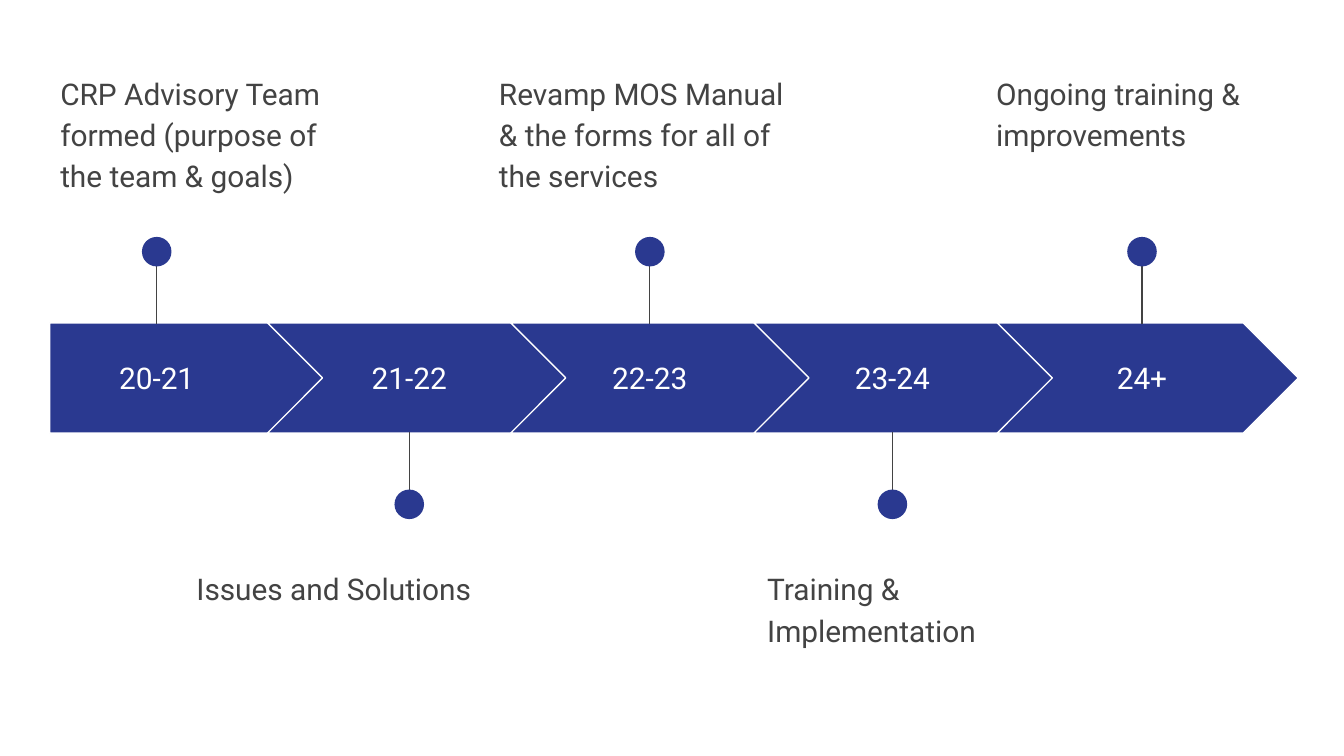
from dataclasses import dataclass

from lxml.etree import SubElement
from pptx import Presentation
from pptx.dml.color import RGBColor
from pptx.enum.shapes import MSO_CONNECTOR, MSO_SHAPE
from pptx.enum.text import MSO_ANCHOR, PP_ALIGN
from pptx.oxml.ns import qn
from pptx.slide import Slide
from pptx.util import Inches, Pt


@dataclass(frozen=True)
class Theme:
    font: str = "Roboto"
    size: Pt = Pt(16)
    line_width: Pt = Pt(0.75)
    blue: RGBColor = RGBColor(0x2A, 0x39, 0x90)
    gray: RGBColor = RGBColor(0x43, 0x43, 0x43)
    white: RGBColor = RGBColor(0xFF, 0xFF, 0xFF)


@dataclass(frozen=True)
class Milestone:
    """One school year; pin and note_left are percentages of the slide width."""
    years: str
    note: str
    pin: float
    note_left: float
    label_width: float = 1.44
    note_height: float = 0.99


THEME = Theme()
WIDTH = 10
HEIGHT = WIDTH * 9 / 16
MIDDLE = HEIGHT / 2
PERCENT = WIDTH / 100

GRID_LEFT, COLUMN = 0.18, 1.81
ARROW_WIDTH, ARROW_HEIGHT = 2.24, 0.82
FIRST_INSET = 0.19
LABEL_HEIGHT = 0.51
PIN_START, PIN_END = 0.4, 1.01
DOT, DOT_OFFSET = 0.22, 0.94
NOTE_WIDTH = 2.45
NOTE_TOP_ABOVE, NOTE_TOP_BELOW = 0.42, 4.11

MILESTONES = [
    Milestone("20-21", "CRP Advisory Team formed (purpose of the team & goals)",
              11.66, 3.5, label_width=1.59),
    Milestone("21-22", "Issues and Solutions", 30.45, 13.63),
    Milestone("22-23", "Revamp MOS Manual & the forms for all of the services",
              48.35, 36.14, note_height=1.19),
    Milestone("23-24", "Training & Implementation", 66.4, 56.1),
    Milestone("24+", "Ongoing training & improvements", 84.97, 73.13),
]
LABEL_FORMAT = {"alignment": PP_ALIGN.CENTER}
NOTE_FORMAT = {"line_spacing": 1.15, "space_after": Pt(16)}


def add_solid(page: Slide, kind: MSO_SHAPE, left: float, top: float,
              width: float, height: float, outlined: bool) -> None:
    shape = page.shapes.add_shape(
        kind, Inches(left), Inches(top), Inches(width), Inches(height))
    shape.shadow.inherit = False
    shape.fill.solid()
    shape.fill.fore_color.rgb = THEME.blue
    if outlined:
        shape.line.color.rgb = THEME.white
        shape.line.width = THEME.line_width
    else:
        shape.line.fill.background()


def add_text(page: Slide, text: str, left: float, top: float, width: float,
             height: float, color: RGBColor, anchor: MSO_ANCHOR,
             para_format: dict) -> None:
    box = page.shapes.add_textbox(
        Inches(left), Inches(top), Inches(width), Inches(height))
    frame = box.text_frame
    frame.word_wrap = True
    frame.vertical_anchor = anchor
    for side in ("left", "top", "right", "bottom"):
        setattr(frame, f"margin_{side}", Inches(0.1))
    para = frame.paragraphs[0]
    for name, value in para_format.items():
        setattr(para, name, value)
    span = para.add_run()
    span.text = text
    for name, value in {"name": THEME.font, "size": THEME.size}.items():
        setattr(span.font, name, value)
    span.font.color.rgb = color


def add_pin(page: Slide, center: float, direction: int) -> None:
    """Draw a stem and dot leaving the arrow band: -1 is up, 1 is down."""
    stem = page.shapes.add_connector(
        MSO_CONNECTOR.STRAIGHT,
        Inches(center), Inches(MIDDLE + direction * PIN_END),
        Inches(center), Inches(MIDDLE + direction * PIN_START))
    stem.line.color.rgb = THEME.gray
    stem.line.width = THEME.line_width
    SubElement(stem.element.spPr, qn("a:effectLst"))
    dot_middle = MIDDLE + direction * DOT_OFFSET
    add_solid(page, MSO_SHAPE.OVAL, center - DOT / 2, dot_middle - DOT / 2,
              DOT, DOT, outlined=False)


def add_milestone(page: Slide, column: int, milestone: Milestone) -> None:
    above = column % 2 == 0
    inset = FIRST_INSET if column == 0 else 0
    kind = MSO_SHAPE.PENTAGON if column == 0 else MSO_SHAPE.CHEVRON
    center = milestone.pin * PERCENT

    add_solid(page, kind, GRID_LEFT + column * COLUMN + inset,
              MIDDLE - ARROW_HEIGHT / 2, ARROW_WIDTH - inset, ARROW_HEIGHT,
              outlined=True)
    add_text(page, milestone.years, center - milestone.label_width / 2,
             MIDDLE - LABEL_HEIGHT / 2, milestone.label_width, LABEL_HEIGHT,
             THEME.white, MSO_ANCHOR.MIDDLE, LABEL_FORMAT)
    add_pin(page, center, -1 if above else 1)
    add_text(page, milestone.note, milestone.note_left * PERCENT,
             NOTE_TOP_ABOVE if above else NOTE_TOP_BELOW,
             NOTE_WIDTH, milestone.note_height,
             THEME.gray, MSO_ANCHOR.TOP, NOTE_FORMAT)


def main() -> None:
    deck = Presentation()
    deck.slide_width, deck.slide_height = Inches(WIDTH), Inches(HEIGHT)
    page = deck.slides.add_slide(deck.slide_layouts[6])
    for column, milestone in enumerate(MILESTONES):
        add_milestone(page, column, milestone)
    deck.save("out.pptx")


if __name__ == "__main__":
    main()
